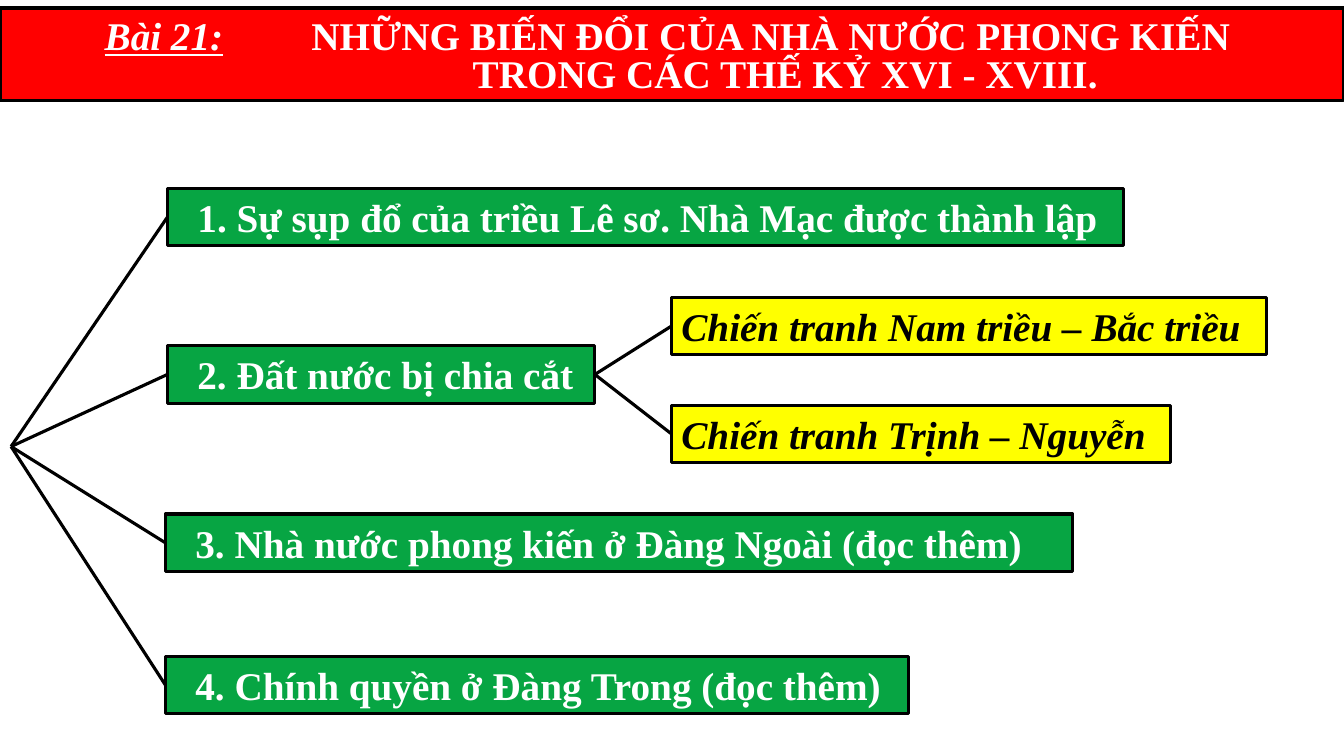
from dataclasses import dataclass

from lxml.etree import SubElement
from pptx import Presentation
from pptx.dml.color import RGBColor
from pptx.enum.shapes import MSO_CONNECTOR, MSO_SHAPE
from pptx.enum.text import MSO_ANCHOR, MSO_AUTO_SIZE, PP_ALIGN
from pptx.oxml.ns import qn
from pptx.util import Inches, Pt

# Content: heading, then sections as (text, left, top, width, subtopics)
LESSON = "Bài 21:"
TITLE_LINES = ["NHỮNG BIẾN ĐỔI CỦA NHÀ NƯỚC PHONG KIẾN", "TRONG CÁC THẾ KỶ XVI - XVIII."]
WARS = [
    ("Chiến tranh Nam triều – Bắc triều", 6.66, 2.95, 5.9),
    ("Chiến tranh Trịnh – Nguyễn", 6.66, 4.02, 4.95),
]
SECTIONS = [
    ("1. Sự sụp đổ của triều Lê sơ. Nhà Mạc được thành lập", 1.66, 1.87, 9.48, []),
    ("2. Đất nước bị chia cắt", 1.66, 3.43, 4.24, WARS),
    ("3. Nhà nước phong kiến ở Đàng Ngoài (đọc thêm)", 1.64, 5.1, 9, []),
    ("4. Chính quyền ở Đàng Trong (đọc thêm)", 1.64, 6.51, 7.37, []),
]

# Layout, in inches
SLIDE_WIDTH, SLIDE_HEIGHT = 13.33, 7.5
BANNER_TOP, BANNER_HEIGHT = 0.08, 0.92
LESSON_INDENT, TITLE_INDENT, SUBTITLE_INDENT = 0.94, 2.99, 4.59
BOX_HEIGHT, SECTION_INDENT = 0.57, 0.2
ROOT = (0.11, 4.43)


@dataclass(frozen=True)
class Theme:
    font: str = "Times New Roman"
    size: Pt = Pt(28)
    stroke: Pt = Pt(2.25)
    banner: RGBColor = RGBColor(0xFF, 0x00, 0x00)
    section: RGBColor = RGBColor(0x07, 0xA5, 0x43)
    war: RGBColor = RGBColor(0xFF, 0xFF, 0x00)
    light: RGBColor = RGBColor(0xFF, 0xFF, 0xFF)
    dark: RGBColor = RGBColor(0x00, 0x00, 0x00)


THEME = Theme()


def add_box(slide, left, top, width, height, fill):
    box = slide.shapes.add_shape(
        MSO_SHAPE.RECTANGLE, Inches(left), Inches(top), Inches(width), Inches(height))
    box.shadow.inherit = False
    box.fill.solid()
    box.fill.fore_color.rgb = fill
    box.line.color.rgb = THEME.dark
    box.line.width = THEME.stroke
    box.text_frame.word_wrap = True
    return box


def style_run(run, color, italic=False, underline=False):
    font = run.font
    font.name, font.size, font.bold = THEME.font, THEME.size, True
    font.italic, font.underline = italic, underline
    font.color.rgb = color


def indent(paragraph, margin, first_line=0):
    paragraph.alignment = PP_ALIGN.LEFT
    properties = paragraph._p.get_or_add_pPr()
    properties.set("marL", str(Inches(margin)))
    properties.set("indent", str(Inches(first_line)))


def add_topic(slide, text, left, top, width, fill, color, margin=0, italic=False):
    topic = add_box(slide, left, top, width, BOX_HEIGHT, fill)
    frame = topic.text_frame
    frame.auto_size = MSO_AUTO_SIZE.SHAPE_TO_FIT_TEXT
    frame.vertical_anchor = MSO_ANCHOR.TOP
    frame.text = text
    indent(frame.paragraphs[0], margin)
    style_run(frame.paragraphs[0].runs[0], color, italic)
    return topic


def add_branch(slide, child, parent=None):
    x, y = (Inches(value) for value in ROOT)
    branch = slide.shapes.add_connector(MSO_CONNECTOR.STRAIGHT, x, y, x, y)
    if parent is not None:
        branch.begin_connect(parent, 3)
    branch.end_connect(child, 1)
    branch.line.color.rgb = THEME.dark
    branch.line.width = THEME.stroke
    SubElement(branch._element.spPr, qn("a:effectLst"))


def add_banner(slide):
    banner = add_box(slide, 0, BANNER_TOP, SLIDE_WIDTH, BANNER_HEIGHT, THEME.banner)
    frame = banner.text_frame
    frame.vertical_anchor = MSO_ANCHOR.BOTTOM
    frame.text = LESSON
    first, second = frame.paragraphs[0], frame.add_paragraph()
    style_run(first.runs[0], THEME.light, italic=True, underline=True)
    # The hanging indent carries the title past the lesson number
    indent(first, TITLE_INDENT, LESSON_INDENT - TITLE_INDENT)
    indent(second, SUBTITLE_INDENT)
    for paragraph, prefix, line in zip((first, second), ("\t", ""), TITLE_LINES):
        paragraph.line_spacing = 0.8
        title = paragraph.add_run()
        title.text = prefix + line
        style_run(title, THEME.light)


def main():
    deck = Presentation()
    deck.slide_width, deck.slide_height = Inches(SLIDE_WIDTH), Inches(SLIDE_HEIGHT)
    slide = deck.slides.add_slide(deck.slide_layouts[6])

    add_banner(slide)

    # Sections branch from the root, wars from their section
    for text, left, top, width, wars in SECTIONS:
        section = add_topic(slide, text, left, top, width,
                            THEME.section, THEME.light, SECTION_INDENT)
        add_branch(slide, section)
        for war_place in wars:
            war = add_topic(slide, *war_place, THEME.war, THEME.dark, italic=True)
            add_branch(slide, war, section)

    deck.save("out.pptx")


if __name__ == "__main__":
    main()
